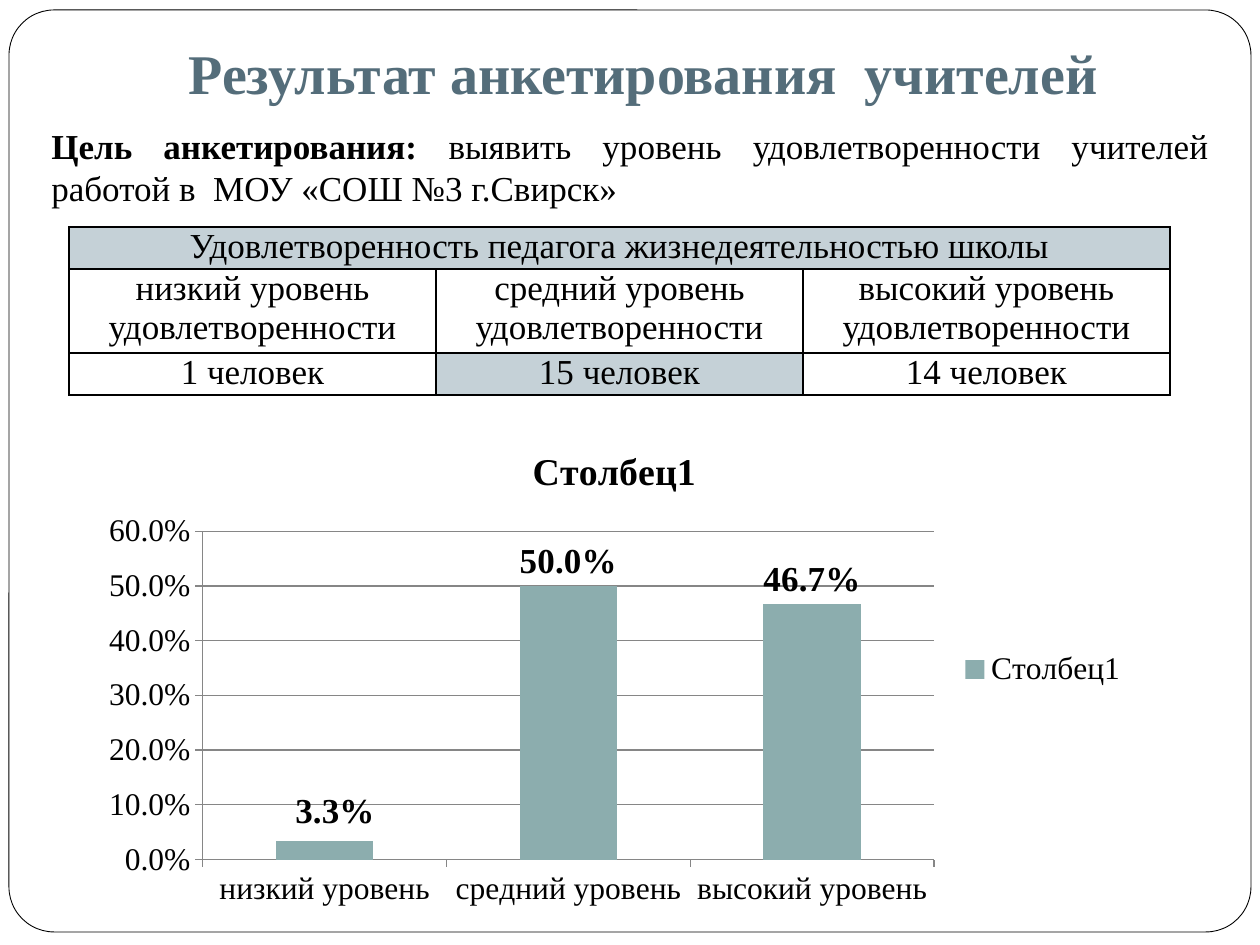
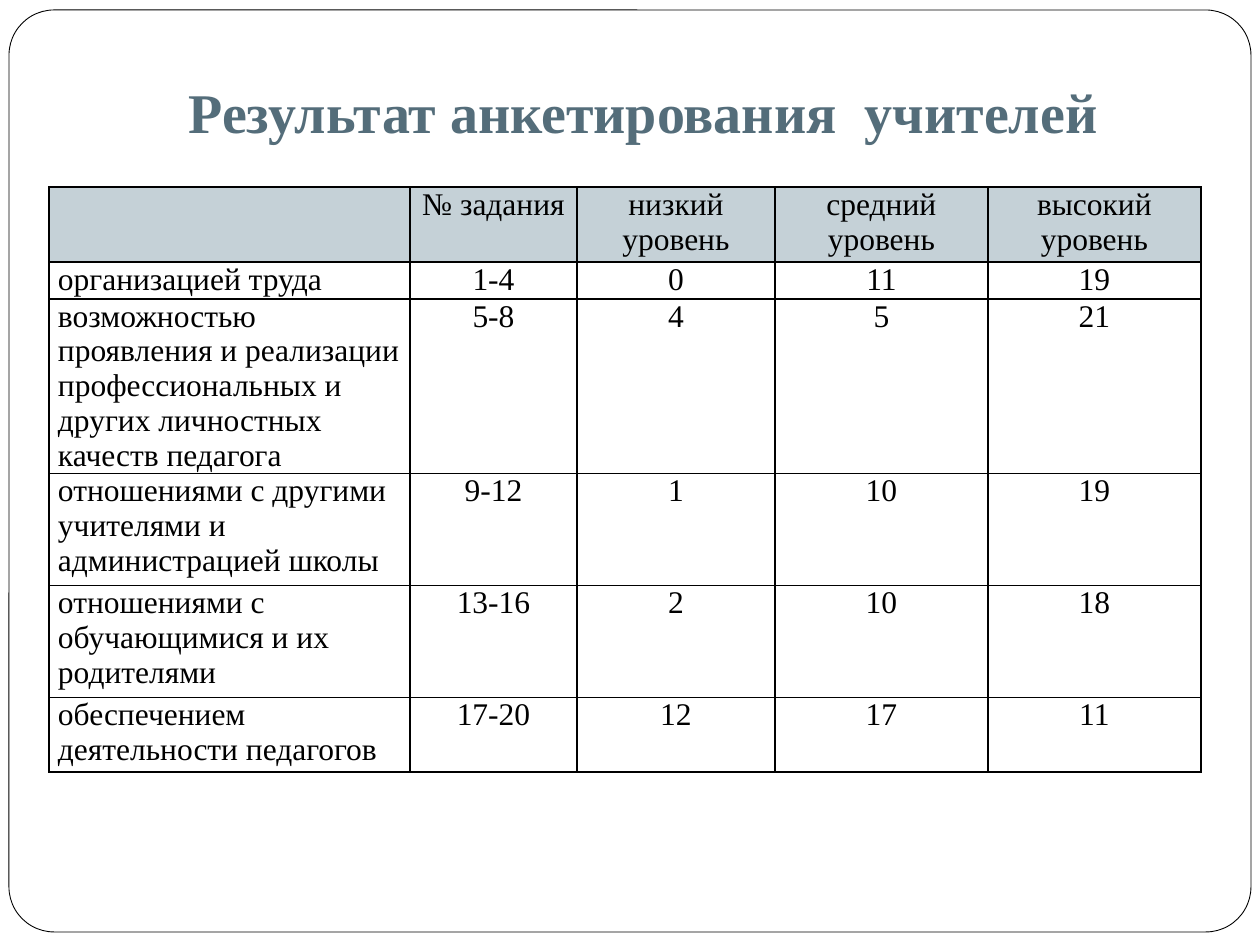
from lxml import etree
from pptx import Presentation
from pptx import util as u
from pptx.chart.data import CategoryChartData
from pptx.dml.color import RGBColor
from pptx.enum import chart as charts, shapes, text
from pptx.oxml import parse_xml
from pptx.oxml.ns import nsdecls, qn

FONT = "Times New Roman"
BLACK, WHITE = "000000", "FFFFFF"
TITLE_COLOUR, SHADE, BAR, GRID = "546D7A", "C5D1D7", "8CADAE", "868686"
TITLE = "Результат анкетирования  учителей"
CENTER, LEFT = text.PP_ALIGN.CENTER, text.PP_ALIGN.LEFT

LEVELS = ["низкий уровень", "средний уровень", "высокий уровень"]
SATISFACTION = [
    ["Удовлетворенность педагога жизнедеятельностью школы", "", ""],
    [f"{level} удовлетворенности" for level in LEVELS],
    ["1 человек", "15 человек", "14 человек"],
]
ASPECTS = [
    ["", "№ задания", *LEVELS],
    ["организацией труда", "1-4", "0", "11", "19"],
    ["возможностью проявления и реализации профессиональных и других "
     "личностных качеств педагога", "5-8", "4", "5", "21"],
    ["отношениями с другими учителями и администрацией школы",
     "9-12", "1", "10", "19"],
    ["отношениями с обучающимися и их родителями", "13-16", "2", "10", "18"],
    ["обеспечением деятельности педагогов", "17-20", "12", "17", "11"],
]


def px(length):
    return u.Emu(round(length * 914400 / 126))


def place(box):
    return [px(length) for length in box]


def colour(value):
    return RGBColor.from_string(value)


def style(font, size, shade=BLACK, bold=None):
    font.name, font.size, font.bold = FONT, u.Pt(size), bold
    font.color.rgb = colour(shade)


def add_frame(page, box):
    frame = page.shapes.add_shape(shapes.MSO_SHAPE.ROUNDED_RECTANGLE, *place(box))
    frame.adjustments[0] = 0.049
    frame.shadow.inherit = False
    frame.fill.solid()
    frame.fill.fore_color.rgb = colour(WHITE)
    frame.line.color.rgb = colour(BLACK)
    frame.line.width = u.Pt(0.5)
    page.slide_layout.shapes.element.insert(2, frame.element)


def add_title(page, box):
    title = page.shapes.title
    title.left, title.top, title.width, title.height = place(box)
    frame = title.text_frame
    frame.text = TITLE
    frame.auto_size = text.MSO_AUTO_SIZE.NONE
    frame.vertical_anchor = text.MSO_ANCHOR.BOTTOM
    frame.margin_bottom = u.Inches(0.1)
    para = frame.paragraphs[0]
    para.alignment = CENTER
    style(para.font, 32, TITLE_COLOUR, True)


def add_goal(page, box):
    frame = page.shapes.add_textbox(*place(box)).text_frame
    frame.word_wrap = True
    frame.auto_size = text.MSO_AUTO_SIZE.SHAPE_TO_FIT_TEXT
    frame.vertical_anchor = text.MSO_ANCHOR.MIDDLE
    para = frame.paragraphs[0]
    para.alignment = text.PP_ALIGN.JUSTIFY
    style(para.font, 20)
    for words, bold in [
        ("Цель анкетирования: ", True),
        ("выявить уровень удовлетворенности учителей работой в  "
         "МОУ «СОШ №3 г.Свирск»", False),
    ]:
        span = para.add_run()
        span.text, span.font.bold = words, bold


def add_borders(cell):
    properties = cell._tc.get_or_add_tcPr()
    for index, side in enumerate("LRTB"):
        properties.insert(index, parse_xml(
            f'<a:ln{side} {nsdecls("a")} w="12700"><a:solidFill>'
            f'<a:srgbClr val="{BLACK}"/></a:solidFill></a:ln{side}>'))


def add_grid(page, corner, widths, heights, rows, size, shaded, first_align=CENTER):
    box = (*corner, sum(widths), sum(heights))
    table = page.shapes.add_table(len(rows), len(widths), *place(box)).table
    table.first_row = table.horz_banding = False
    for column, width in zip(table.columns, widths):
        column.width = px(width)
    for r, (row, height) in enumerate(zip(rows, heights)):
        table.rows[r].height = px(height)
        for c, words in enumerate(row):
            cell = table.cell(r, c)
            cell.text = words
            cell.margin_left = cell.margin_right = px(9)
            cell.margin_top = cell.margin_bottom = 0
            para = cell.text_frame.paragraphs[0]
            para.alignment = first_align if c == 0 else CENTER
            style(para.font, size)
            if (r, c) in shaded:
                cell.fill.solid()
                cell.fill.fore_color.rgb = colour(SHADE)
            else:
                cell.fill.background()
            add_borders(cell)
    return table


def rule(line):
    line.color.rgb = colour(GRID)
    line.width = u.Pt(0.75)


def shift_label(series, index, x, y):
    label = series.points[index].data_label
    label.position = charts.XL_LABEL_POSITION.OUTSIDE_END
    style(label.font, 20, bold=True)
    layout = parse_xml(
        f'<c:layout {nsdecls("c")}><c:manualLayout><c:x val="{x}"/>'
        f'<c:y val="{y}"/></c:manualLayout></c:layout>')
    series._element.find(".//" + qn("c:dLbl")).insert(1, layout)


def add_level_chart(page, box):
    data = CategoryChartData(number_format="0.0%")
    data.categories = LEVELS
    data.add_series("Столбец1", [0.033, 0.5, 0.467])
    chart = page.shapes.add_chart(
        charts.XL_CHART_TYPE.COLUMN_CLUSTERED, *place(box), data).chart
    style(chart.font, 18)
    chart.has_title = True
    chart.chart_title.text_frame.text = "Столбец1"
    style(chart.chart_title.text_frame.paragraphs[0].font, 21.6, bold=True)
    chart.has_legend = True
    chart.legend.position = charts.XL_LEGEND_POSITION.RIGHT
    chart.legend.include_in_layout = False

    for axis in (chart.category_axis, chart.value_axis):
        axis.major_tick_mark = charts.XL_TICK_MARK.OUTSIDE
        rule(axis.format.line)
    chart.value_axis.maximum_scale = 0.6
    chart.value_axis.minimum_scale = 0
    chart.value_axis.major_unit = 0.1
    chart.value_axis.tick_labels.number_format = "0.0%"
    chart.value_axis.tick_labels.number_format_is_linked = False
    rule(chart.value_axis.major_gridlines.format.line)

    plot = chart.plots[0]
    plot.vary_by_categories = False
    plot.gap_width = 150
    series = plot.series[0]
    series.format.fill.solid()
    series.format.fill.fore_color.rgb = colour(BAR)
    labels = series.data_labels
    labels.show_value = True
    labels.number_format = "0.0%"
    labels.number_format_is_linked = False
    labels.position = charts.XL_LABEL_POSITION.OUTSIDE_END
    style(labels.font, 20, bold=True)
    shift_label(series, 0, 0.01, -0.01)


def build_summary(page):
    add_title(page, (78, 0, 1131, 118))
    add_goal(page, (39, 118, 1182, 97))
    table = add_grid(page, (69, 227), [367] * 3, [42, 84, 42], SATISFACTION, 20,
                     {(0, 0), (0, 1), (0, 2), (2, 1)})
    table.cell(0, 0).merge(table.cell(0, 2))
    add_level_chart(page, (88, 423, 1053, 493))


def build_aspects(page):
    add_title(page, (78, 39, 1131, 118))
    add_grid(page, (49, 187), [361, 167, 198, 213, 213],
             [75, 37, 174, 112, 112, 75], ASPECTS, 18,
             {(0, column) for column in range(5)}, LEFT)


def main():
    deck = Presentation()
    deck.slide_width, deck.slide_height = px(1260), px(945)
    layout = deck.slide_layouts[5]
    summary, aspects = [deck.slides.add_slide(layout) for _ in range(2)]
    add_frame(summary, (9, 10, 1242, 922))
    build_summary(summary)
    build_aspects(aspects)
    deck.save("out.pptx")


if __name__ == "__main__":
    main()
